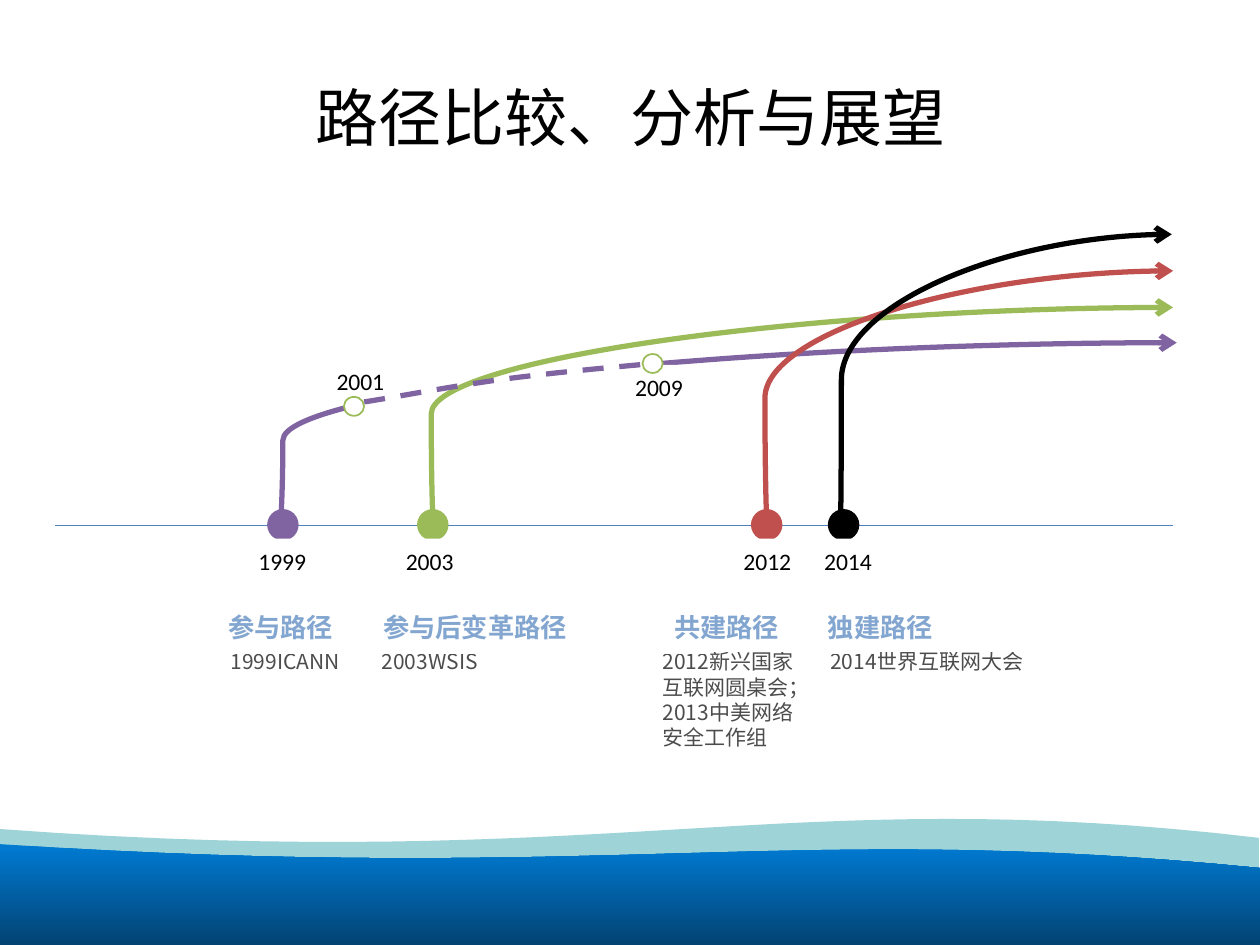
from dataclasses import dataclass
from lxml.etree import SubElement
from pptx import Presentation
from pptx.dml.color import RGBColor
from pptx.enum.dml import MSO_LINE
from pptx.enum.shapes import MSO_CONNECTOR, MSO_SHAPE
from pptx.enum.text import MSO_ANCHOR, MSO_AUTO_SIZE, PP_ALIGN
from pptx.oxml.ns import qn
from pptx.util import Inches, Pt


@dataclass(frozen=True)
class Theme:
    chinese: str = "Noto Sans CJK SC"
    latin: str = "Calibri"
    title_size: float = 36
    heading_size: float = 15
    year_size: float = 13.5
    detail_size: float = 12
    black: str = "000000"
    white: str = "FFFFFF"
    blue: str = "4F81BD"
    purple: str = "8064A2"
    green: str = "9BBB59"
    red: str = "C0504D"
    wave_light: str = "9ED3D7"
    wave_top: str = "007BD3"
    wave_bottom: str = "034373"
    thin: float = 1
    border: float = 2
    thick: float = 3


THEME = Theme()
WIDTH, HEIGHT = 10, 7.5
AXIS = 4.17
DOT_TOP, DOT, MARKER = 4.04, 0.25, (0.16, 0.15)
YEAR_SIZE = (0.62, 0.33)
YEAR_TOP, HEADING_TOP, DETAIL_TOP = 4.29, 4.85, 5.15

TITLE = "路径比较、分析与展望"
# heading, (left, width), detail, (left, width, height)
PATHS = [
    ("参与路径", (1.81, 0.85), "1999ICANN", (1.83, 1.17, 0.2)),
    ("参与后变革路径", (3.04, 1.48), "2003WSIS", (3.03, 1.17, 0.2)),
    ("共建路径", (5.35, 0.85), "2012新兴国家互联网圆桌会；2013中美网络安全工作组", (5.26, 1.17, 0.81)),
    ("独建路径", (6.57, 0.85), "2014世界互联网大会", (6.59, 1.59, 0.2)),
]
# left of dot, colour
DOTS = [(2.12, THEME.purple), (3.31, THEME.green), (5.96, THEME.red), (6.57, THEME.black)]
# start, end, bend of the curve, colour
PURPLE_ARROW = ((2.21, 4.27), (9.34, 2.72), 0.005, THEME.purple)
GREEN_ARROW = ((3.44, 4.13), (9.31, 2.44), -0.003, THEME.green)
RED_ARROW = ((6.09, AXIS), (9.31, 2.15), -0.006, THEME.red)
BLACK_ARROW = ((6.67, AXIS), (9.3, 1.86), 0.003, THEME.black)
YEARS = [
    ("1999", 1.93, YEAR_TOP), ("2001", 2.55, 2.86), ("2003", 3.1, YEAR_TOP),
    ("2009", 4.92, 2.91), ("2012", 5.78, YEAR_TOP), ("2014", 6.42, YEAR_TOP),
]
MARKERS = [(2.73, 3.15), (5.1, 2.81)]
GAP_COVER = (2.81, 2.8, 2.4, 0.5)
DASHES = [
    ((2.89, 3.19), (3.1, 3.16), (3.6, 3.06), (4.07, 3)),
    ((4.07, 3), (4.55, 2.94), (5.03, 2.9), (5.24, 2.88)),
]
LIGHT_WAVE = ((0, 6.58), (4.87, 6.94), (6.2, 6.2), (9.99, 6.65))
LIGHT_WAVE_BOTTOM = 7.4
DARK_WAVE = ((0, 6.7), (4.88, 7.02), (6.21, 6.51), (WIDTH, 6.89))


def color(value):
    return RGBColor.from_string(value)


def bezier(curve, steps=32):
    """Return evenly stepped points along a cubic curve."""
    points = []
    for step in range(steps + 1):
        t = step / steps
        weights = ((1 - t) ** 3, 3 * t * (1 - t) ** 2, 3 * t * t * (1 - t), t ** 3)
        points.append(tuple(sum(w * point[axis] for w, point in zip(weights, curve))
                            for axis in (0, 1)))
    return points


def write(frame, text, size, font, fill=THEME.black, bold=False, alpha=None, align=PP_ALIGN.LEFT):
    paragraph = frame.paragraphs[0]
    paragraph.alignment = align
    run = paragraph.add_run()
    run.text = text
    run.font.size = Pt(size)
    run.font.bold = bold
    run.font.name = font
    run.font.color.rgb = color(fill)
    properties = run.font._element
    if alpha is not None:
        shade = properties.find(qn("a:solidFill"))[0]
        SubElement(shade, qn("a:alpha")).set("val", str(alpha * 1000))
    east_asian = SubElement(properties, qn("a:ea"))
    east_asian.set("typeface", font)


def add_text(shapes, box, text, size, wrap, **style):
    frame = shapes.add_textbox(*map(Inches, box)).text_frame
    frame.margin_left = frame.margin_top = frame.margin_right = frame.margin_bottom = 0
    frame.word_wrap = wrap
    frame.auto_size = MSO_AUTO_SIZE.SHAPE_TO_FIT_TEXT
    write(frame, text, size, THEME.chinese, alpha=70, **style)


def add_filled(shapes, kind, box, fill, line=None, width=THEME.thin):
    shape = shapes.add_shape(kind, *map(Inches, box))
    shape.shadow.inherit = False
    shape.fill.solid()
    shape.fill.fore_color.rgb = color(fill)
    if line:
        shape.line.color.rgb = color(line)
        shape.line.width = Pt(width)
    else:
        shape.line.fill.background()
    return shape


def add_outline(shapes, points, close):
    start, *rest = [tuple(map(Inches, point)) for point in points]
    builder = shapes.build_freeform(*start)
    builder.add_line_segments(rest, close=close)
    shape = builder.convert_to_shape()
    shape.shadow.inherit = False
    return shape


def add_wave(shapes, curve, bottom):
    corners = [(curve[-1][0], bottom), (0, bottom)]
    wave = add_outline(shapes, bezier(curve) + corners, close=True)
    wave.line.fill.background()
    return wave


def add_line(shapes, kind, start, end, stroke, width):
    connector = shapes.add_connector(kind, *map(Inches, start + end))
    connector.line.color.rgb = color(stroke)
    connector.line.width = Pt(width)
    SubElement(connector._element.spPr, qn("a:effectLst"))
    connector._element.remove(connector._element.find(qn("p:style")))
    return connector


def add_path_arrow(shapes, start, end, bend, stroke):
    arrow = add_line(shapes, MSO_CONNECTOR.CURVE, start, end, stroke, THEME.thick)
    geometry = arrow._element.spPr.find(qn("a:prstGeom"))
    adjustments = geometry.find(qn("a:avLst"))
    if adjustments is None:
        adjustments = SubElement(geometry, qn("a:avLst"))
    guide = SubElement(adjustments, qn("a:gd"))
    guide.set("name", "adj1")
    guide.set("fmla", f"val {round(bend * 100000)}")
    SubElement(arrow.line._get_or_add_ln(), qn("a:tailEnd")).set("type", "arrow")


def main():
    presentation = Presentation()
    presentation.slide_width, presentation.slide_height = Inches(WIDTH), Inches(HEIGHT)
    slide = presentation.slides.add_slide(presentation.slide_layouts[5])
    shapes = slide.shapes

    title = shapes.title
    title.left, title.top, title.width, title.height = map(Inches, (0.5, 0.3, 9, 1.25))
    title.text_frame.vertical_anchor = MSO_ANCHOR.MIDDLE
    write(title.text_frame, TITLE, THEME.title_size, THEME.chinese, align=PP_ALIGN.CENTER)

    light = add_wave(shapes, LIGHT_WAVE, LIGHT_WAVE_BOTTOM)
    light.fill.solid()
    light.fill.fore_color.rgb = color(THEME.wave_light)
    dark = add_wave(shapes, DARK_WAVE, HEIGHT)
    dark.fill.gradient()
    dark.fill.gradient_angle = 270
    for stop, position, shade in zip(dark.fill.gradient_stops, (0, 1),
                                     (THEME.wave_top, THEME.wave_bottom)):
        stop.position, stop.color.rgb = position, color(shade)

    add_line(shapes, MSO_CONNECTOR.STRAIGHT, (0.44, AXIS), (9.31, AXIS), THEME.blue, THEME.thin)
    for heading, (left, width), detail, (detail_left, detail_width, height) in PATHS:
        add_text(shapes, (left, HEADING_TOP, width, 0.25), heading, THEME.heading_size,
                 wrap=False, fill=THEME.blue, bold=True)
        add_text(shapes, (detail_left, DETAIL_TOP, detail_width, height), detail,
                 THEME.detail_size, wrap=True)

    for left, fill in DOTS:
        add_filled(shapes, MSO_SHAPE.OVAL, (left, DOT_TOP, DOT, DOT), fill)
    add_path_arrow(shapes, *PURPLE_ARROW)
    add_filled(shapes, MSO_SHAPE.ROUND_1_RECTANGLE, GAP_COVER, THEME.white)
    add_path_arrow(shapes, *GREEN_ARROW)
    for year, left, top in YEARS:
        label = add_filled(shapes, MSO_SHAPE.ROUND_2_DIAG_RECTANGLE, (left, top, *YEAR_SIZE),
                           THEME.white, THEME.white, THEME.border)
        label.text_frame.vertical_anchor = MSO_ANCHOR.MIDDLE
        write(label.text_frame, year, THEME.year_size, THEME.latin, align=PP_ALIGN.CENTER)

    first, second = map(bezier, DASHES)
    dashed = add_outline(shapes, first + second[1:], close=False)
    dashed.fill.background()
    dashed.line.color.rgb = color(THEME.purple)
    dashed.line.width = Pt(THEME.thick)
    dashed.line.dash_style = MSO_LINE.DASH
    for position in MARKERS:
        add_filled(shapes, MSO_SHAPE.OVAL, position + MARKER, THEME.white, THEME.green)
    for arrow in (RED_ARROW, BLACK_ARROW):
        add_path_arrow(shapes, *arrow)
    presentation.save("out.pptx")


if __name__ == "__main__":
    main()
